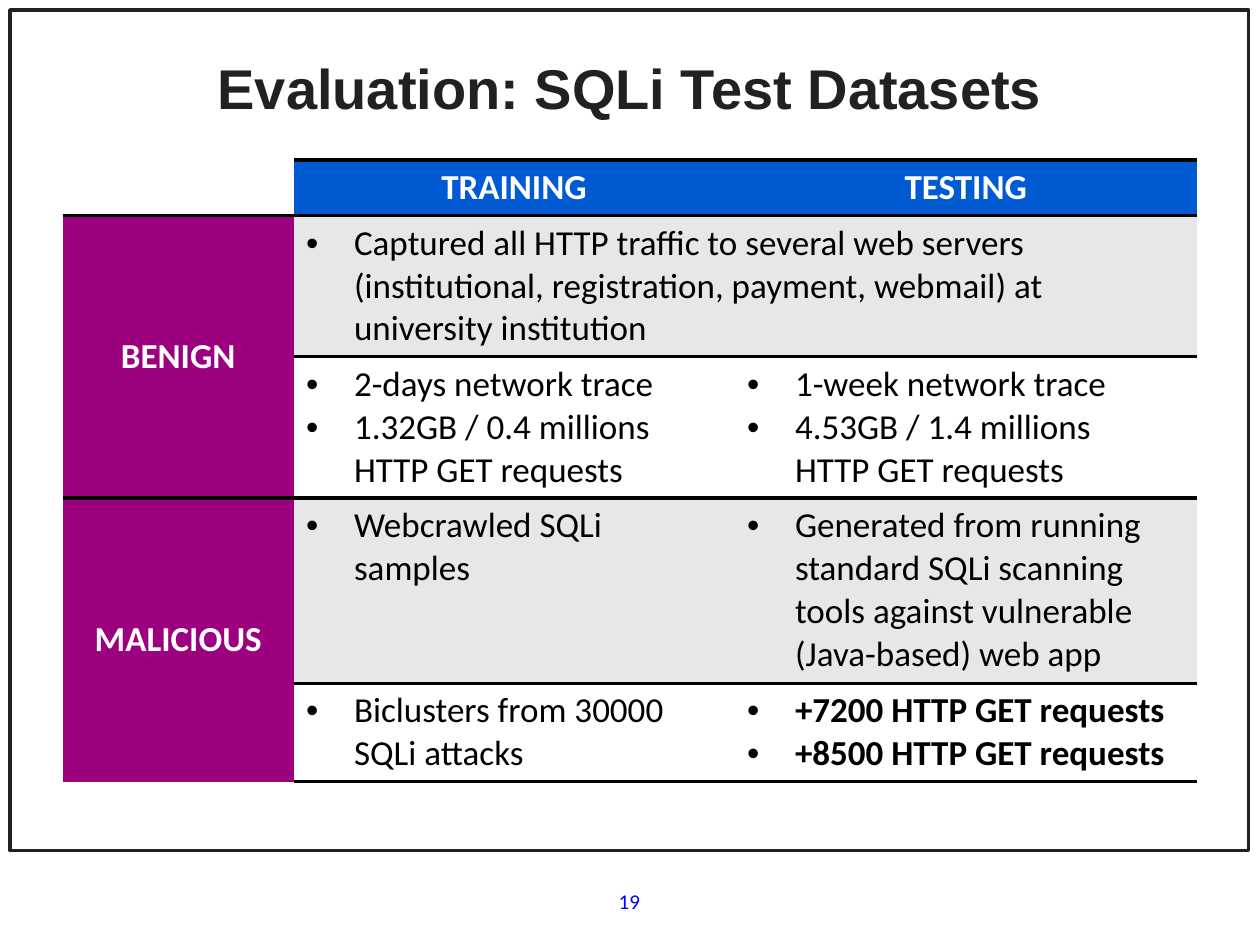
from pptx import Presentation
from pptx.dml.color import RGBColor
from pptx.enum.shapes import MSO_SHAPE
from pptx.enum.text import MSO_ANCHOR, PP_ALIGN
from pptx.oxml.xmlchemy import OxmlElement
from pptx.util import Inches, Pt

COLORS = {"ink": "212121", "black": "000000", "white": "FFFFFF", "head": "005BD3",
          "side": "9C007F", "band": "E7E7E7", "page": "0000FF"}
COLS, ROWS = 100, 75
PLAIN = "{2D5ABB26-0587-4C30-8999-92F81FD0307C}"


def tint(name):
    """Return the named colour."""
    return RGBColor.from_string(COLORS[name])


def write(frame, *lines, size=20, face="Calibri", color="black", bold=False,
          align=PP_ALIGN.LEFT, anchor=MSO_ANCHOR.TOP, bullet=False):
    """Fill a text frame with one paragraph per line."""
    frame.word_wrap = True
    frame.vertical_anchor = anchor
    for i, line in enumerate(lines):
        para = frame.add_paragraph() if i else frame.paragraphs[0]
        para.text = line
        para.alignment = align
        if bullet:
            props = para._p.get_or_add_pPr()
            props.set("marL", str(Inches(0.38)))
            props.set("indent", str(-Inches(0.38)))
            font, mark = OxmlElement("a:buFont"), OxmlElement("a:buChar")
            font.set("typeface", "Arial")
            mark.set("char", "•")
            props.extend([font, mark])
        for run in para.runs:
            run.font.size, run.font.name, run.font.bold = Pt(size), face, bold
            run.font.color.rgb = tint(color)


def edge(cell, side, width):
    """Draw one border of a table cell."""
    line, fill, color = (OxmlElement(t) for t in (f"a:{side}", "a:solidFill", "a:srgbClr"))
    line.set("w", str(Pt(width)))
    color.set("val", COLORS["black"])
    fill.append(color)
    line.append(fill)
    cell._tc.get_or_add_tcPr().append(line)


class Deck:
    """Hold the style and the current slide."""

    def __init__(self):
        """Open a deck with one titled slide."""
        self.file = Presentation()
        self.file.slide_width, self.file.slide_height = Inches(10), Inches(7.5)
        self.slide = self.file.slides.add_slide(self.file.slide_layouts[5])
        self.shapes = self.slide.shapes

    def wide(self, cols):
        """Turn grid columns into a length."""
        return round(self.file.slide_width * cols / COLS)

    def tall(self, rows):
        """Turn grid rows into a length."""
        return round(self.file.slide_height * rows / ROWS)

    def area(self, x, y, w, h):
        """Turn a grid box into lengths."""
        return self.wide(x), self.tall(y), self.wide(w), self.tall(h)

    def title(self, text, *box):
        """Place and format the title."""
        item = self.shapes.title
        item.left, item.top, item.width, item.height = self.area(*box)
        write(item.text_frame, text, size=32, face="Arial", color="ink", bold=True,
              align=PP_ALIGN.CENTER, anchor=MSO_ANCHOR.MIDDLE)

    def border(self, *box):
        """Draw the frame of the slide."""
        item = self.shapes.add_shape(MSO_SHAPE.RECTANGLE, *self.area(*box))
        item.shadow.inherit = False
        item.fill.background()
        item.line.color.rgb = tint("ink")
        item.line.width = Pt(2)

    def label(self, text, *box, **style):
        """Add a text box."""
        write(self.shapes.add_textbox(*self.area(*box)).text_frame, text, **style)

    def table(self, x, y, cols, rows, cells, spans, rules):
        """Add a table from cell texts, merged spans and ruled edges."""
        box = self.area(x, y, sum(cols), sum(rows))
        grid = self.shapes.add_table(len(rows), len(cols), *box).table
        grid._tbl.tblPr.find("{*}tableStyleId").text = PLAIN
        grid.first_row = grid.horz_banding = False
        for col, w in zip(grid.columns, cols):
            col.width = self.wide(w)
        for row, h in zip(grid.rows, rows):
            row.height = self.tall(h)
        for first, last in spans:
            grid.cell(*first).merge(grid.cell(*last))
        for r in range(len(rows)):
            for c in range(len(cols)):
                cell = grid.cell(r, c)
                for side, line in (("lnT", r), ("lnB", r + 1)):
                    if (line, c) in rules:
                        edge(cell, side, rules[line, c])
                cell.fill.background()
        for (r, c), (fill, lines, style) in cells.items():
            cell = grid.cell(r, c)
            cell.fill.solid()
            cell.fill.fore_color.rgb = tint(fill)
            cell.vertical_anchor = style.get("anchor", MSO_ANCHOR.TOP)
            write(cell.text_frame, *lines, **style)


def main():
    """Build the slide."""
    deck = Deck()
    deck.border(0.8, 0.8, 98.3, 66.7)
    deck.title("Evaluation: SQLi Test Datasets", 5, 3, 90, 7.8)
    mid = {"align": PP_ALIGN.CENTER, "anchor": MSO_ANCHOR.MIDDLE}
    head = {"color": "white", "bold": True, **mid}
    item = {"bullet": True}
    cells = {
        (0, 1): ("head", ["TRAINING"], head),
        (0, 2): ("head", ["TESTING"], head),
        (1, 0): ("side", ["BENIGN"], head),
        (1, 1): ("band", ["Captured all HTTP traffic to several web servers (institutional, "
                          "registration, payment, webmail) at university institution"], item),
        (2, 1): ("white", ["2-days network trace",
                           "1.32GB / 0.4 millions HTTP GET requests"], item),
        (2, 2): ("white", ["1-week network trace",
                           "4.53GB / 1.4 millions\vHTTP GET requests"], item),
        (3, 0): ("side", ["MALICIOUS"], head),
        (3, 1): ("band", ["Webcrawled SQLi samples"], item),
        (3, 2): ("band", ["Generated from running standard SQLi scanning tools against "
                          "vulnerable (Java-based) web app"], item),
        (4, 1): ("white", ["Biclusters from 30000 SQLi attacks"], item),
        (4, 2): ("white", ["+7200 HTTP GET requests", "+8500 HTTP GET requests"],
                 {"bold": True, **item}),
    }
    spans = [((1, 0), (2, 0)), ((1, 1), (1, 2)), ((3, 0), (4, 0))]
    rules = {(r, c): 2.25 for r in (1, 3, 5) for c in range(3)}
    rules.update({(r, c): 2 for r in (0, 4) for c in (1, 2)})
    deck.table(5, 12.7, [18.3, 35, 36.7], [4.4, 11.2, 11.2, 14.7, 7.8], cells, spans, rules)
    deck.label("19", 38.3, 69.5, 23.3, 4, size=12, color="page", **mid)
    deck.file.save("out.pptx")


if __name__ == "__main__":
    main()
